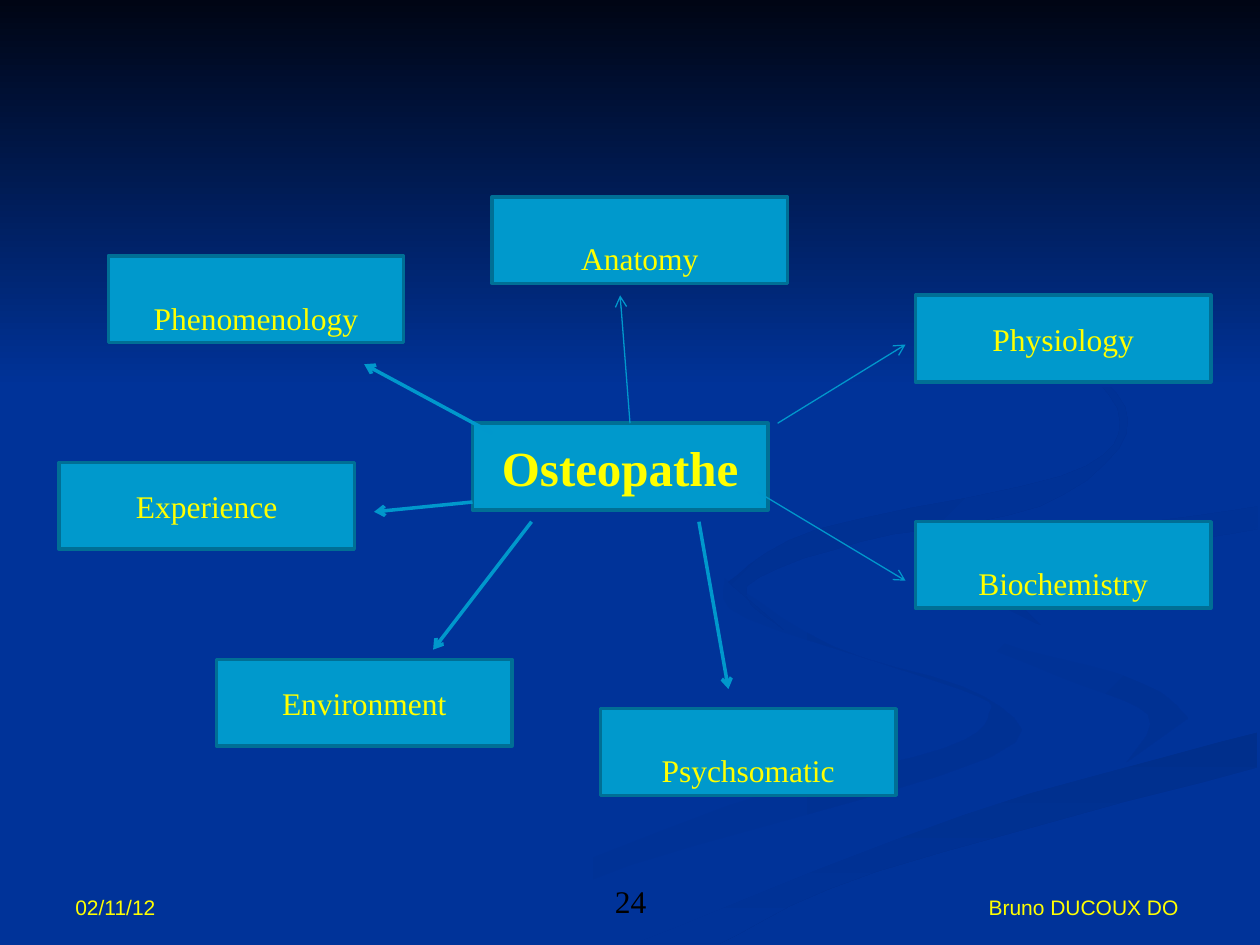
import pptx
import pptx.util
import pptx.dml.color
import pptx.enum.shapes
import pptx.enum.text
import pptx.oxml
import pptx.oxml.ns

MIDDLE = pptx.enum.text.MSO_ANCHOR.MIDDLE
BOTTOM = pptx.enum.text.MSO_ANCHOR.BOTTOM
ALIGN = pptx.enum.text.PP_ALIGN

COLORS = {
    "background": "003399", "night": "000514", "box": "0099CC", "border": "006F95",
    "arrow": "0098CC", "text": "FFFF00", "number": "000000",
    "left": "003193", "stroke": "002F8C", "wave": "003091", "tail": "002F8E",
}
SERIF, SANS = "Times New Roman", "Arial"

# Topics and arrows sit on a grid of 128 columns across the slide width.
GRID = 128
BOX_COLUMNS, BOX_ROWS = 30, 8.8
LINE_ROWS = 3.7  # height of one 18 pt line, for labels that sit one line lower
CENTER = ("Osteopathe", 48, 43)

# label, column, row, lines left free above the label
TOPICS = [
    ("Phenomenology", 11, 26, 1),
    ("Anatomy", 50, 20, 1),
    ("Physiology", 93, 30, 0),
    ("Biochemistry", 93, 53, 1),
    ("Experience", 6, 47, 0),
    ("Environment", 22, 67, 0),
    ("Psychsomatic", 61, 72, 1),
]

# start column and row, end column and row, by line width
ARROWS = {
    2: [(50, 44, 37, 37), (48, 51, 38, 52), (54, 53, 44, 66), (71, 53, 74, 70)],
    0.75: [(79, 43, 92, 35), (64, 43, 63, 30), (77, 50, 92, 59)],
}

# text, left and width as shares of the slide, alignment, size, font, colour
FOOTERS = [
    ("02/11/12", 0.05, 0.233, ALIGN.LEFT, 12, SANS, "text"),
    ("Bruno DUCOUX DO ", 0.717, 0.233, ALIGN.RIGHT, 12, SANS, "text"),
    ("24", 0.342, 0.317, ALIGN.CENTER, 18, SERIF, "number"),
]
FOOTER_TOP, FOOTER_HEIGHT = 0.911, 0.069
NIGHT_HEIGHT = 0.41

# Ribbons: gradient colours, angle, then edges; a smooth curve runs through
# the points of each edge, given in thousandths of the slide width
CURVE_STEPS = 5
RIBBONS = [
    ("background", "left", 0, [
        [(575, 459), (593, 491), (762, 547), (785, 566), (749, 594), (579, 639),
         (300, 749)],
        [(361, 749), (499, 687), (786, 601), (781, 553), (661, 513), (575, 459)]]),
    ("background", "left", 45, [
        [(724, 464), (739, 494), (838, 536), (911, 567), (894, 605)],
        [(943, 570), (905, 540), (792, 509), (724, 464)]]),
    ("stroke", "background", 90, [
        [(571, 749), (695, 692), (998, 609)],
        [(998, 581), (764, 647), (503, 749)]]),
    ("background", "background", 0, [
        [(725, 464), (759, 498), (889, 535), (943, 570), (902, 603), (743, 643),
         (477, 749)],
        [(503, 749), (764, 647), (999, 581)],
        [(999, 538), (866, 509), (784, 469), (822, 434), (999, 402)],
        [(999, 387), (808, 417), (725, 464)]]),
    ("wave", "background", 45, [
        [(781, 460), (791, 478), (826, 496)],
        [(805, 476), (843, 448), (998, 420)],
        [(998, 402), (865, 424), (781, 460)]]),
    ("tail", "background", 45, [
        [(762, 233), (864, 291), (894, 344), (825, 402), (683, 430), (593, 465),
         (622, 500)],
        [(578, 462), (649, 420), (842, 378), (889, 335), (846, 279), (762, 233)]]),
]


def rgb(name):
    return pptx.dml.color.RGBColor.from_string(COLORS[name])


def smooth(points):
    """Return points along a Catmull-Rom curve through the given ones."""
    padded = [points[0], *points, points[-1]]
    curve = [points[0]]
    for a, b, c, d in zip(padded, padded[1:], padded[2:], padded[3:]):
        for step in range(1, CURVE_STEPS + 1):
            t = step / CURVE_STEPS
            curve.append(tuple(
                q + t * (r - p) / 2 + t**2 * (2 * p - 5 * q + 4 * r - s) / 2
                + t**3 * (3 * q - p - 3 * r + s) / 2
                for p, q, r, s in zip(a, b, c, d)))
    return curve


def paint_gradient(shape, first, last, angle):
    shape.shadow.inherit = False
    shape.line.fill.background()
    shape.fill.gradient()
    shape.fill.gradient_angle = -angle % 360
    for stop, name in zip(shape.fill.gradient_stops, (first, last)):
        stop.color.rgb = rgb(name)


def add_ribbon(slide, scale, first, last, angle, edges):
    outline = [point for edge in edges for point in smooth(edge)]
    builder = slide.shapes.build_freeform(*outline[0], scale=scale)
    builder.add_line_segments(outline[1:], close=True)
    paint_gradient(builder.convert_to_shape(), first, last, angle)


def add_rectangle(slide, *frame):
    return slide.shapes.add_shape(
        pptx.enum.shapes.MSO_SHAPE.RECTANGLE, *(int(n) for n in frame))


def write(shape, text, anchor, alignment, size, font, color, bold=False):
    frame = shape.text_frame
    frame.text = text
    frame.word_wrap = True
    frame.vertical_anchor = anchor
    paragraph = frame.paragraphs[0]
    paragraph.alignment = alignment
    style = paragraph.runs[0].font
    style.name, style.size, style.bold = font, pptx.util.Pt(size), bold
    style.color.rgb = rgb(color)


def add_topic(slide, unit, label, column, row, free_lines=0, size=18, bold=False):
    shape = add_rectangle(
        slide, *(n * unit for n in (column, row, BOX_COLUMNS, BOX_ROWS)))
    shape.shadow.inherit = False
    shape.fill.solid()
    shape.fill.fore_color.rgb = rgb("box")
    shape.line.color.rgb = rgb("border")
    shape.line.width = pptx.util.Pt(2)
    write(shape, label, MIDDLE, ALIGN.CENTER, size, SERIF, "text", bold)
    shape.text_frame.margin_top += int(free_lines * LINE_ROWS * unit)


def add_arrow(slide, unit, ends, width):
    connector = slide.shapes.add_connector(
        pptx.enum.shapes.MSO_CONNECTOR.STRAIGHT, *(int(n * unit) for n in ends))
    connector.line.color.rgb = rgb("arrow")
    connector.line.width = pptx.util.Pt(width)
    namespace = pptx.oxml.ns.nsdecls("a")
    line = connector.line._get_or_add_ln()
    line.append(pptx.oxml.parse_xml(f'<a:tailEnd {namespace} type="arrow"/>'))
    line.getparent().append(pptx.oxml.parse_xml(f"<a:effectLst {namespace}/>"))


def main():
    presentation = pptx.Presentation()
    presentation.slide_width = width = pptx.util.Inches(10)
    presentation.slide_height = height = pptx.util.Inches(7.5)
    slide = presentation.slides.add_slide(presentation.slide_layouts[6])
    slide.background.fill.solid()
    slide.background.fill.fore_color.rgb = rgb("background")
    unit = width / GRID

    for ribbon in RIBBONS:
        add_ribbon(slide, width / 1000, *ribbon)
    night = add_rectangle(slide, 0, 0, width, NIGHT_HEIGHT * height)
    paint_gradient(night, "night", "background", 90)
    for text, left, share, *style in FOOTERS:
        box = slide.shapes.add_textbox(
            int(left * width), int(FOOTER_TOP * height),
            int(share * width), int(FOOTER_HEIGHT * height))
        write(box, text, BOTTOM, *style)
    add_topic(slide, unit, *CENTER, size=28, bold=True)
    for topic in TOPICS:
        add_topic(slide, unit, *topic)
    for thickness, arrows in ARROWS.items():
        for ends in arrows:
            add_arrow(slide, unit, ends, thickness)
    presentation.save("out.pptx")


if __name__ == "__main__":
    main()
